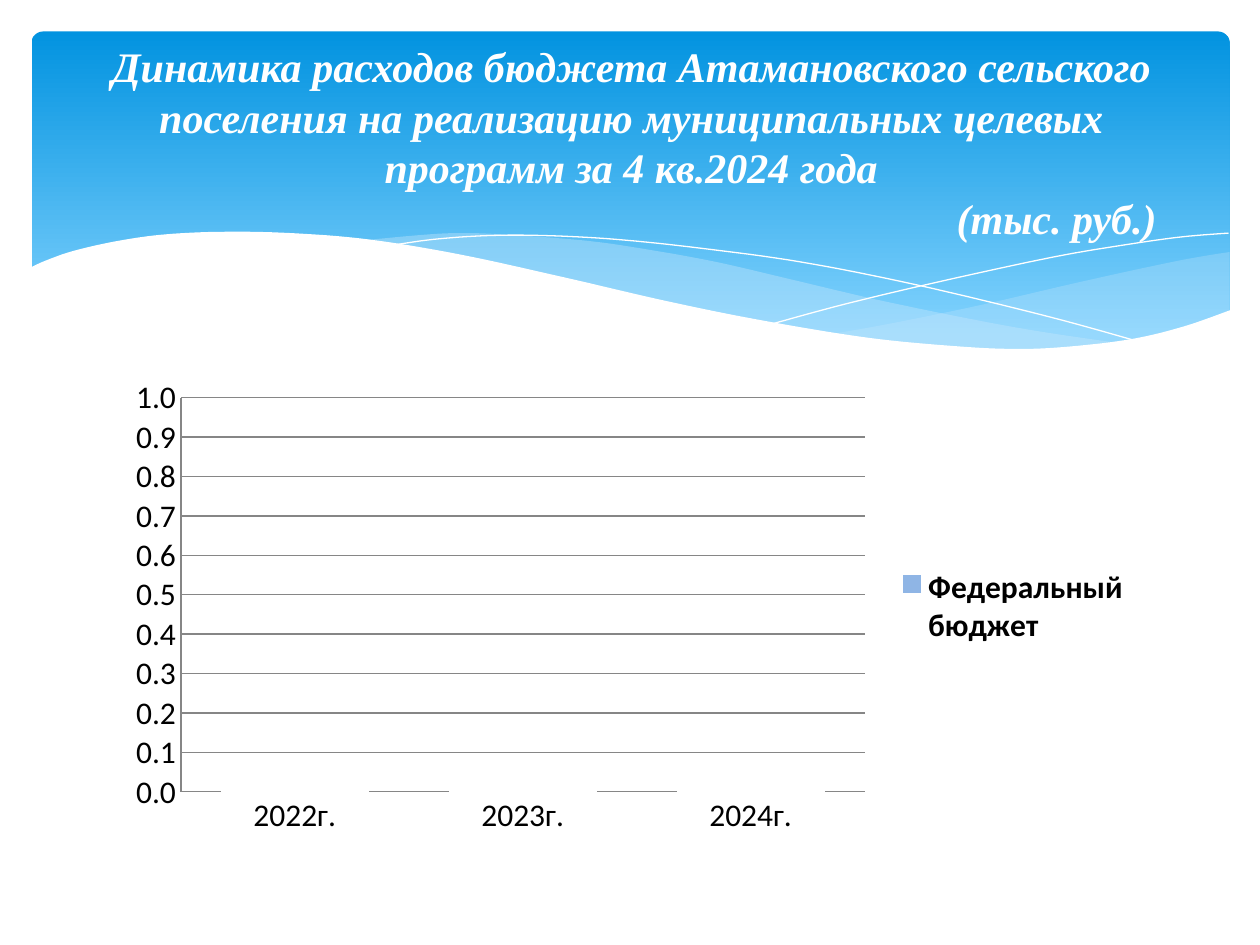
from itertools import chain

from lxml import etree
from pptx import Presentation, util as u
from pptx.chart.data import CategoryChartData
from pptx.dml.color import RGBColor
from pptx.enum import chart as charts, shapes, text
from pptx.oxml import parse_xml
from pptx.oxml.ns import nsdecls, qn

COLUMNS, ROWS = 10, 7.5
WIDTH, HEIGHT = u.Inches(10), u.Inches(7.5)
STEPS = 8

RIGHT_BAND = [
    [(9.76, 2), (9.35, 2.07), (8.61, 2.23), (7.79, 2.42), (7.06, 2.57), (6.61, 2.65)],
    [(6.61, 2.65), (7.19, 2.72), (7.69, 2.77), (8.14, 2.78), (8.63, 2.75),
     (9.05, 2.69), (9.42, 2.59), (9.76, 2.47)],
]
MIDDLE_BAND = [
    [(8.93, 2.73), (8.07, 2.6), (7.06, 2.4), (6.29, 2.22), (5.69, 2.08), (5.14, 1.98),
     (4.65, 1.91), (3.99, 1.86), (3.61, 1.85), (3.28, 1.87), (2.86, 1.91)],
    [(2.86, 1.91), (3.42, 1.99), (4.04, 2.11), (4.91, 2.32), (5.66, 2.48), (6.34, 2.61),
     (6.95, 2.7), (7.48, 2.76), (7.96, 2.78), (8.48, 2.77), (8.93, 2.73)],
]
FALLING_LINE = [
    [(3.09, 1.95), (3.44, 1.9), (3.87, 1.87), (4.33, 1.87), (4.89, 1.9), (5.56, 1.97),
     (6.36, 2.08), (7.27, 2.26), (8.31, 2.51), (9.07, 2.72)],
]
RISING_LINE = [
    [(6.13, 2.57), (6.72, 2.41), (7.48, 2.23), (8.36, 2.04), (8.95, 1.94),
     (9.38, 1.88), (9.75, 1.85)],
]
WHITE_WAVE = [
    [(9.77, 2.46), (9.4, 2.59), (8.99, 2.69), (8.5, 2.75), (8.09, 2.77), (7.61, 2.75),
     (6.88, 2.68), (6.03, 2.54), (5.29, 2.39), (4.47, 2.2), (3.65, 2.02), (2.92, 1.9),
     (2.3, 1.85), (1.77, 1.84), (1.32, 1.86), (0.95, 1.91), (0.59, 1.99),
     (0.36, 2.07), (0.23, 2.13)],
    [(0.23, 3.29), (9.77, 3.29)],
]


def color(value):
    return RGBColor.from_string(value)


def place(column, row):
    return round(WIDTH * column / COLUMNS), round(HEIGHT * row / ROWS)


def box(column, row, columns, rows):
    return *place(column, row), *place(columns, rows)


def apply(target, values):
    for name, value in values.items():
        setattr(target, name, value)


def smooth(anchors):
    padded = [anchors[0], *anchors, anchors[-1]]
    points = [anchors[0]]
    for before, start, end, after in zip(padded, padded[1:], padded[2:], padded[3:]):
        for step in range(1, STEPS + 1):
            t = step / STEPS
            points.append(tuple(
                b + t * (c - a) / 2
                + t ** 2 * (2 * a - 5 * b + 4 * c - d) / 2
                + t ** 3 * (3 * b - a - 3 * c + d) / 2
                for a, b, c, d in zip(before, start, end, after)))
    return points


def add_banner(slide):
    banner = slide.shapes.add_shape(
        shapes.MSO_SHAPE.ROUNDED_RECTANGLE, *box(0.25, 0.25, 9.51, 2.7))
    banner.adjustments[0] = 0.034
    banner.shadow.inherit = False
    banner.line.fill.background()
    banner.fill.gradient()
    banner.fill.gradient_angle = 270
    stops = (("0293E0", 0), ("83D3FE", 0.9))
    for stop, (shade, position) in zip(banner.fill.gradient_stops, stops):
        stop.color.rgb = color(shade)
        stop.position = position


def add_wave(slide, edges, fill=None, opacity=100):
    points = [place(*point) for point in chain.from_iterable(map(smooth, edges))]
    builder = slide.shapes.build_freeform(*points[0], scale=1.0)
    builder.add_line_segments(points[1:], close=fill is not None)
    wave = builder.convert_to_shape()
    wave.shadow.inherit = False
    if fill is None:
        wave.fill.background()
        wave.line.color.rgb = color("FFFFFF")
        wave.line.width = u.Pt(0)
        return
    wave.line.fill.background()
    wave.fill.solid()
    wave.fill.fore_color.rgb = color(fill)
    if opacity < 100:
        shade = wave.fill._xPr.find(".//" + qn("a:srgbClr"))
        etree.SubElement(shade, qn("a:alpha"), val=str(opacity * 1000))


def add_title(slide):
    title = slide.shapes.add_textbox(*box(0.51, 0.36, 9, 1.53)).text_frame
    apply(title, {"word_wrap": True, "vertical_anchor": text.MSO_ANCHOR.MIDDLE,
                  "margin_left": u.Inches(0.33), "margin_right": u.Inches(0.33)})
    lines = (
        ("Динамика расходов бюджета Атамановского сельского поселения "
         "на реализацию муниципальных целевых программ за 4 кв.2024 года",
         text.PP_ALIGN.CENTER),
        ("(тыс. руб.)", text.PP_ALIGN.RIGHT),
    )
    for index, (wording, alignment) in enumerate(lines):
        paragraph = title.add_paragraph() if index else title.paragraphs[0]
        paragraph.alignment = alignment
        run = paragraph.add_run()
        run.text = wording
        apply(run.font, {"name": "Times New Roman", "size": u.Pt(24),
                         "bold": True, "italic": True})
        run.font.color.rgb = color("FFFFFF")


def chart_layout(x, y, w, h, inner=False):
    target = '<c:layoutTarget val="inner"/>' if inner else ""
    sizes = "".join(f'<c:{name} val="{value}"/>'
                    for name, value in zip("xywh", (x, y, w, h)))
    return parse_xml(
        f'<c:layout {nsdecls("c")}><c:manualLayout>{target}'
        f'<c:xMode val="edge"/><c:yMode val="edge"/>{sizes}'
        '</c:manualLayout></c:layout>')


def replace_layout(parent, index, layout):
    for previous in parent.findall(qn("c:layout")):
        parent.remove(previous)
    parent.insert(index, layout)


def style_legend(chart):
    chart.has_legend = True
    legend = chart.legend
    apply(legend, {"position": charts.XL_LEGEND_POSITION.RIGHT,
                   "include_in_layout": False})
    apply(legend.font, {"bold": True, "size": u.Pt(18), "name": "Calibri"})
    legend.font.color.rgb = color("000000")
    hidden = (0, 1)
    for entry in hidden:
        legend._element.insert(entry + 1, parse_xml(
            f'<c:legendEntry {nsdecls("c")}><c:idx val="{entry}"/>'
            '<c:delete val="1"/></c:legendEntry>'))
    replace_layout(legend._element, len(hidden) + 1,
                   chart_layout(0.76, 0.42, 0.23, 0.16))


def add_budget_chart(slide):
    budget = CategoryChartData(number_format="#,##0.0")
    budget.categories = ["2022г.", "2023г.", "2024г."]
    sources = {"Series 1": "92D050", "Series 2": "00B0F0",
               "Федеральный бюджет": "8FB5E5"}
    for source in sources:
        budget.add_series(source, (0, 0, 0))
    chart = slide.shapes.add_chart(
        charts.XL_CHART_TYPE.COLUMN_STACKED, *box(0.95, 2.93, 8.1, 3.77), budget).chart
    chart.has_title = False
    apply(chart.font, {"name": "Calibri", "size": u.Pt(18)})
    chart.font.color.rgb = color("000000")
    columns = chart.plots[0]
    apply(columns, {"gap_width": 55, "overlap": 100, "vary_by_categories": False})
    for series, shade in zip(columns.series, sources.values()):
        series.format.fill.solid()
        series.format.fill.fore_color.rgb = color(shade)
        series.format.line.color.rgb = color("FFFFFF")
    amounts = chart.value_axis
    apply(amounts, {"minimum_scale": 0, "maximum_scale": 1, "major_unit": 0.1,
                    "has_major_gridlines": True})
    apply(amounts.tick_labels, {"number_format": "#,##0.0",
                                "number_format_is_linked": False})
    for axis in (amounts, chart.category_axis):
        axis.major_tick_mark = charts.XL_TICK_MARK.NONE
    for ruled in (amounts, chart.category_axis, amounts.major_gridlines):
        ruled.format.line.color.rgb = color("868686")
        ruled.format.line.width = u.Pt(0.75)
    style_legend(chart)
    plot_area = chart._chartSpace.find(".//" + qn("c:plotArea"))
    replace_layout(plot_area, 0, chart_layout(0.06, 0.06, 0.67, 0.83, inner=True))


def main():
    deck = Presentation()
    apply(deck, {"slide_width": WIDTH, "slide_height": HEIGHT})
    slide = deck.slides.add_slide(deck.slide_layouts[6])
    add_banner(slide)
    add_wave(slide, RIGHT_BAND, "C6E7FC", 29)
    add_wave(slide, MIDDLE_BAND, "C6E7FC", 40)
    add_wave(slide, FALLING_LINE)
    add_wave(slide, RISING_LINE)
    add_wave(slide, WHITE_WAVE, "FFFFFF")
    add_budget_chart(slide)
    add_title(slide)
    deck.save("out.pptx")


if __name__ == "__main__":
    main()
